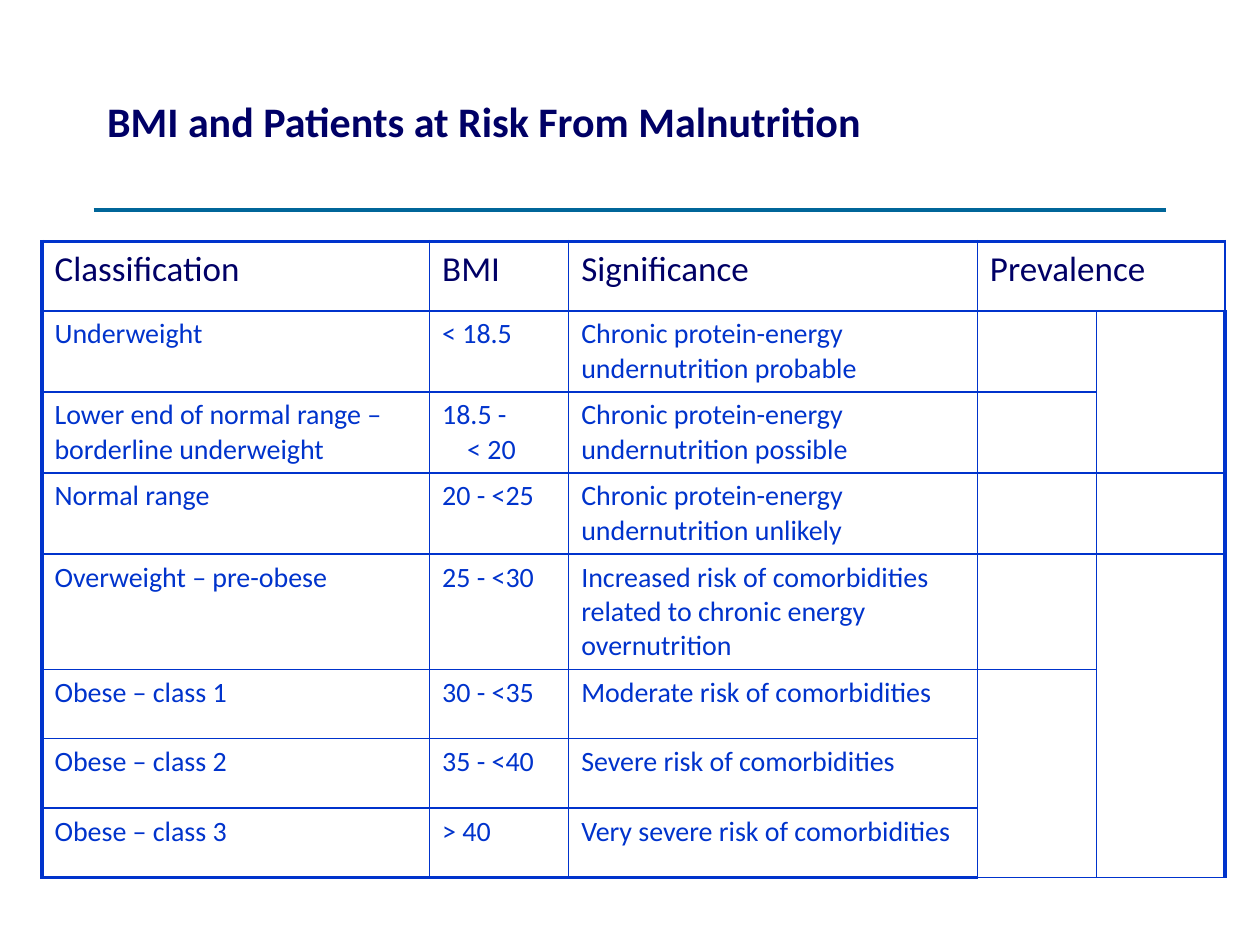
from lxml import etree
from pptx import Presentation
from pptx.dml.color import RGBColor
from pptx.enum.shapes import MSO_CONNECTOR
from pptx.enum.text import MSO_ANCHOR, PP_ALIGN
from pptx.oxml.ns import qn
from pptx.util import Pt

STRAIGHT = MSO_CONNECTOR.STRAIGHT
MIDDLE = MSO_ANCHOR.MIDDLE
LEFT = PP_ALIGN.LEFT
FONT = "Calibri"
COLOURS = {"heading": "000066", "body": "0033CC", "rule": "006699"}
OUTER, INNER = 2.25, 1
TITLE_ONLY = 5

COLUMN_WIDTHS = [221.5, 79.5, 233.5, 68, 73.5]
ROW_HEIGHTS = [39.6, 46.3, 46.3, 46.3, 65.9, 39.6, 39.6, 39.6]
ROWS = [
    ["Classification", "BMI", "Significance", "Prevalence"],
    ["Underweight", "< 18.5", "Chronic protein-energy undernutrition probable"],
    ["Lower end of normal range – borderline underweight", "18.5 -\v< 20",
     "Chronic protein-energy undernutrition possible"],
    ["Normal range", "20 - <25", "Chronic protein-energy undernutrition unlikely"],
    ["Overweight – pre-obese", "25 - <30",
     "Increased risk of comorbidities related to chronic energy overnutrition"],
    ["Obese – class 1", "30 - <35", "Moderate risk of comorbidities"],
    ["Obese – class 2", "35 - <40", "Severe risk of comorbidities"],
    ["Obese – class 3", "> 40", "Very severe risk of comorbidities"],
]
MERGES = [((0, 3), (0, 4)), ((1, 4), (2, 4)), ((4, 4), (7, 4)), ((5, 3), (7, 3))]


def colour(name):
    return RGBColor.from_string(COLOURS[name])


def style_font(para, size, name, bold=False):
    para.font.name = FONT
    para.font.size = Pt(size)
    para.font.bold = bold
    para.font.color.rgb = colour(name)


def add_title(page, left, top, width, height):
    title = page.shapes.title
    title.left, title.top, title.width, title.height = map(Pt, (left, top, width, height))
    title.text_frame.text = "BMI and Patients at Risk From Malnutrition"
    title.text_frame.vertical_anchor = MIDDLE
    para = title.text_frame.paragraphs[0]
    para.alignment = LEFT
    style_font(para, 24, "heading", bold=True)


def add_rule(page, left, top, width):
    rule = page.shapes.add_connector(STRAIGHT, Pt(left), Pt(top), Pt(left + width), Pt(top))
    rule.line.color.rgb = colour("rule")
    rule.line.width = Pt(2.25)
    etree.SubElement(rule._element.spPr, qn("a:effectLst"))


def set_borders(cell, widths):
    properties = cell._tc.get_or_add_tcPr()
    for side, width in widths.items():
        line = etree.SubElement(properties, qn(f"a:ln{side}"), w=str(Pt(width)))
        fill = etree.SubElement(line, qn("a:solidFill"))
        etree.SubElement(fill, qn("a:srgbClr"), val=COLOURS["body"])


def hang_indent(para, indent):
    properties = para._p.get_or_add_pPr()
    properties.set("marL", str(Pt(indent)))
    properties.set("indent", str(-Pt(indent)))


def add_bmi_table(page, left, top):
    last_row, last_column = len(ROW_HEIGHTS) - 1, len(COLUMN_WIDTHS) - 1
    frame = page.shapes.add_table(
        len(ROW_HEIGHTS), len(COLUMN_WIDTHS), Pt(left), Pt(top),
        Pt(sum(COLUMN_WIDTHS)), Pt(sum(ROW_HEIGHTS)))
    table = frame.table
    table.first_row = table.horz_banding = False
    for column, width in zip(table.columns, COLUMN_WIDTHS):
        column.width = Pt(width)
    for row, height in zip(table.rows, ROW_HEIGHTS):
        row.height = Pt(height)

    for r in range(last_row + 1):
        for c in range(last_column + 1):
            cell = table.cell(r, c)
            set_borders(cell, {
                "L": OUTER if c == 0 else INNER,
                "R": OUTER if c == last_column else INNER,
                "T": OUTER if r == 0 else INNER,
                "B": OUTER if r == last_row else INNER,
            })
            cell.fill.background()
    for first, last in MERGES:
        table.cell(*first).merge(table.cell(*last))

    for r, texts in enumerate(ROWS):
        size, name = (20, "heading") if r == 0 else (16, "body")
        for c, text in enumerate(texts):
            frame = table.cell(r, c).text_frame
            frame.text = text
            style_font(frame.paragraphs[0], size, name)
            if "\v" in text:
                hang_indent(frame.paragraphs[0], 14.3)


def main():
    deck = Presentation()
    deck.slide_width, deck.slide_height = Pt(720), Pt(540)
    page = deck.slides.add_slide(deck.slide_layouts[TITLE_ONLY])
    add_title(page, 54, 18, 612, 102)
    add_rule(page, 53.5, 120, 613)
    add_bmi_table(page, 24, 138)
    deck.save("out.pptx")


if __name__ == "__main__":
    main()
